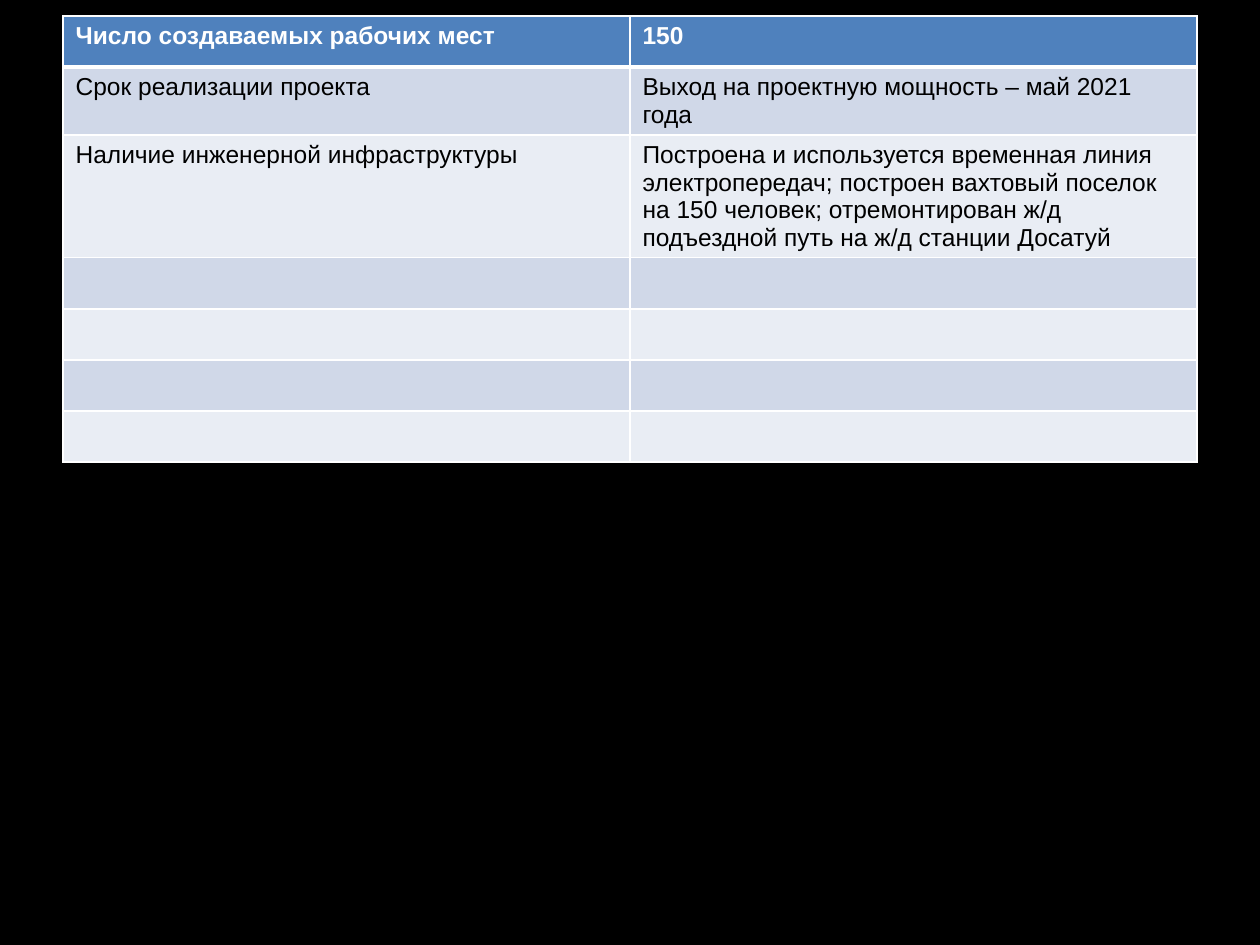
from dataclasses import dataclass

from lxml import etree
from pptx import Presentation, util as u
from pptx.dml.color import RGBColor
from pptx.oxml.ns import qn

SCALE = 914400 / 126  # EMU in one px


@dataclass(frozen=True)
class Theme:
    backdrop: str = "000000"
    header: str = "4F81BD"
    bands: tuple = ("D0D8E8", "E9EDF4")
    rule: str = "FFFFFF"
    header_ink: str = "FFFFFF"
    ink: str = "000000"
    font: str = "Arial"
    size: int = 14
    thin: int = 1
    thick: int = 3


THEME = Theme()
PROJECT_FACTS = [
    ("Число создаваемых рабочих мест", "150"),
    ("Срок реализации проекта", "Выход на проектную мощность – май 2021 года"),
    ("Наличие инженерной инфраструктуры",
     "Построена и используется временная линия электропередач; построен "
     "вахтовый поселок на 150 человек; отремонтирован ж/д подъездной путь "
     "на ж/д станции Досатуй"),
] + [("", "")] * 4
ROW_HEIGHTS = [51, 68, 122] + [51] * 4


def px(length):
    return u.Emu(round(length * SCALE))


def write(frame, words, *, color, bold=False, size=THEME.size, font=THEME.font):
    run = frame.paragraphs[0].add_run()
    run.text = words
    run.font.name, run.font.size, run.font.bold = font, u.Pt(size), bold
    run.font.color.rgb = RGBColor.from_string(color)


def paint(fill, color):
    fill.solid()
    fill.fore_color.rgb = RGBColor.from_string(color)


def rule_cell(cell, widths):
    """Draw the cell borders; widths maps each side (L, R, T, B) to points."""
    properties = cell._tc.get_or_add_tcPr()
    for place, (side, width) in enumerate(widths.items()):
        line = etree.Element(qn(f"a:ln{side}"), w=str(u.Pt(width)))
        solid = etree.SubElement(line, qn("a:solidFill"))
        etree.SubElement(solid, qn("a:srgbClr"), val=THEME.rule)
        properties.insert(place, line)


def facts_table(slide, left, top, width, facts, heights):
    columns = len(facts[0])
    table = slide.shapes.add_table(len(facts), columns, px(left), px(top),
                                   px(width), px(sum(heights))).table
    for column in table.columns:
        column.width = px(width / columns)
    for r, (fact, height) in enumerate(zip(facts, heights)):
        table.rows[r].height = px(height)
        is_header = r == 0
        fill = THEME.header if is_header else THEME.bands[(r - 1) % 2]
        ink = THEME.header_ink if is_header else THEME.ink
        widths = {"L": THEME.thin, "R": THEME.thin,
                  "T": THEME.thick if r == 1 else THEME.thin,
                  "B": THEME.thick if is_header else THEME.thin}
        for cell, words in zip(table.rows[r].cells, fact):
            paint(cell.fill, fill)
            rule_cell(cell, widths)
            if words:
                write(cell.text_frame, words, color=ink, bold=is_header)


def main():
    deck = Presentation()
    deck.slide_width, deck.slide_height = px(1260), px(945)
    slide = deck.slides.add_slide(deck.slide_layouts[6])
    paint(slide.background.fill, THEME.backdrop)
    facts_table(slide, 63, 16, 1134, PROJECT_FACTS, ROW_HEIGHTS)
    deck.save("out.pptx")


if __name__ == "__main__":
    main()
